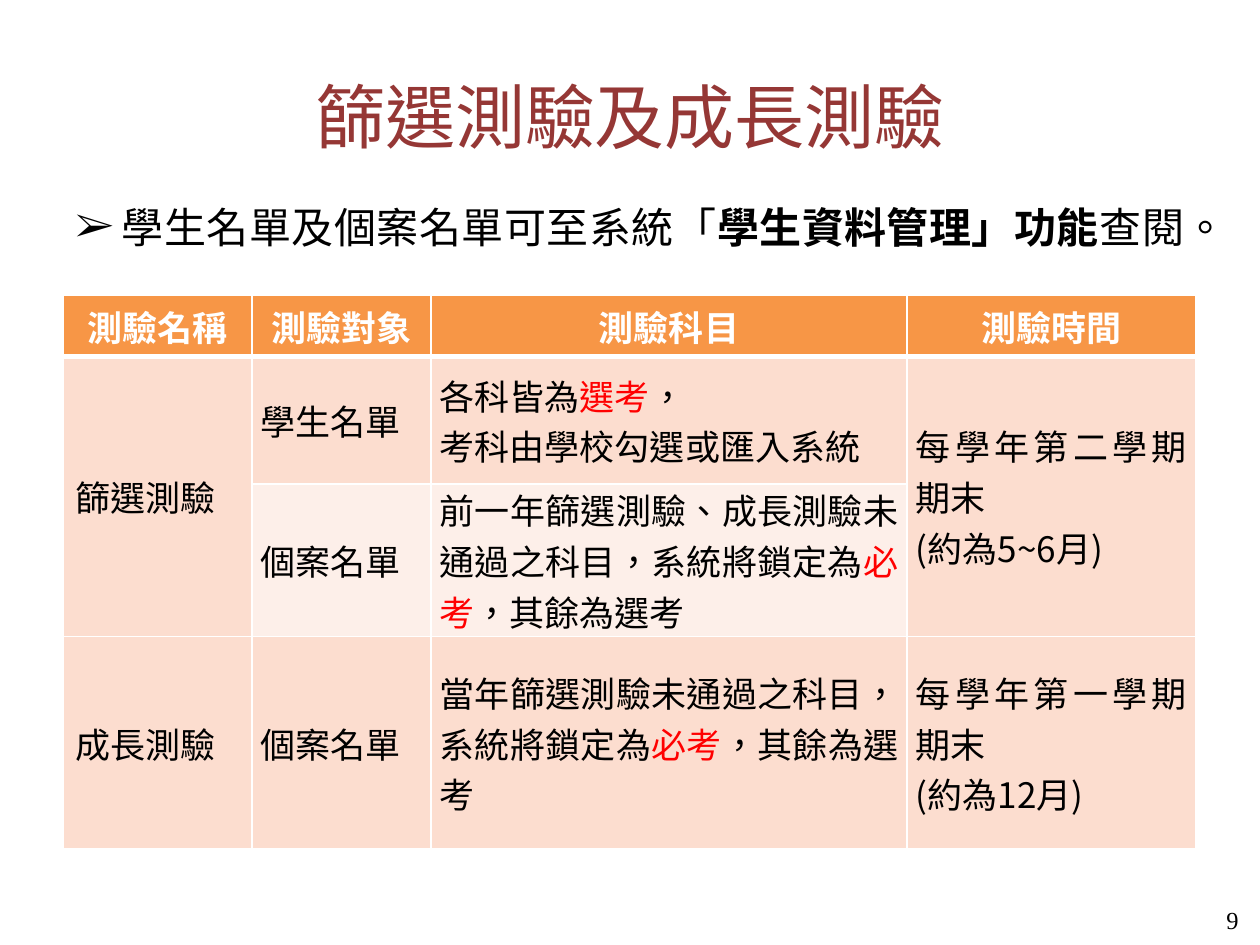
from dataclasses import dataclass

from lxml.etree import SubElement
from pptx import Presentation
from pptx.dml.color import RGBColor
from pptx.enum.text import MSO_ANCHOR, PP_ALIGN
from pptx.oxml.ns import qn
from pptx.util import Inches, Pt

TITLE_RED = RGBColor(0x95, 0x37, 0x35)
BLACK = RGBColor(0, 0, 0)
WHITE = RGBColor(0xFF, 0xFF, 0xFF)
RED = RGBColor(0xFF, 0, 0)
ORANGE = RGBColor(0xF7, 0x96, 0x46)
PEACH = RGBColor(0xFC, 0xDD, 0xCF)
PALE_PEACH = RGBColor(0xFD, 0xEF, 0xE9)
SERIF = "Times New Roman"
SANS = "Noto Sans CJK SC"


@dataclass(frozen=True)
class Span:
    text: str
    color: RGBColor = BLACK
    bold: bool = False


@dataclass(frozen=True)
class BodyCell:
    row: int
    column: int
    lines: tuple[tuple[Span, ...], ...]
    row_span: int = 1


def lines(*texts: str) -> tuple[tuple[Span, ...], ...]:
    return tuple((Span(text),) for text in texts)


def required_subjects(introduction: str) -> tuple[tuple[Span, ...], ...]:
    return ((Span(introduction), Span("必考", RED), Span("，其餘為選考")),)


HEADERS = ("測驗名稱", "測驗對象", "測驗科目", "測驗時間")
COLUMN_WIDTHS = (1.5, 1.42, 3.78, 2.29)
ROW_HEIGHTS = (0.49, 1.01, 1.21, 1.69)
ROW_FILLS = (ORANGE, PEACH, PALE_PEACH, PEACH)
BODY_CELLS = (
    BodyCell(1, 0, lines("篩選測驗"), 2),
    BodyCell(1, 1, lines("學生名單")),
    BodyCell(1, 2, (
        (Span("各科皆為"), Span("選考", RED), Span("，")),
        (Span("考科由學校勾選或匯入系統"),),
    )),
    BodyCell(1, 3, lines("每學年第二學期期末", "(約為5~6月)"), 2),
    BodyCell(2, 1, lines("個案名單")),
    BodyCell(2, 2, required_subjects(
        "前一年篩選測驗、成長測驗未通過之科目，系統將鎖定為")),
    BodyCell(3, 0, lines("成長測驗")),
    BodyCell(3, 1, lines("個案名單")),
    BodyCell(3, 2, required_subjects("當年篩選測驗未通過之科目，系統將鎖定為")),
    BodyCell(3, 3, lines("每學年第一學期期末", "(約為12月)")),
)


def write_paragraph(paragraph, spans: tuple[Span, ...], size: float,
                    font_name: str, alignment: PP_ALIGN) -> None:
    paragraph.alignment = alignment
    for span in spans:
        run = paragraph.add_run()
        run.text = span.text
        run.font.size = Pt(size)
        run.font.name = font_name
        run.font.bold = span.bold
        run.font.color.rgb = span.color
        properties = run._r.get_or_add_rPr()
        properties.set("lang", "zh-TW")
        SubElement(properties, qn("a:ea"), typeface=SANS)


def add_text(slide, left: float, top: float, width: float, height: float,
             spans: tuple[Span, ...], size: float, alignment: PP_ALIGN,
             anchor: MSO_ANCHOR = MSO_ANCHOR.MIDDLE):
    shape = slide.shapes.add_textbox(
        Inches(left), Inches(top), Inches(width), Inches(height))
    frame = shape.text_frame
    frame.word_wrap = True
    frame.vertical_anchor = anchor
    write_paragraph(frame.paragraphs[0], spans, size, SERIF, alignment)
    return frame.paragraphs[0]


def add_bullet(paragraph, character: str, indent: float) -> None:
    properties = paragraph._p.get_or_add_pPr()
    properties.set("marL", str(Inches(indent)))
    properties.set("indent", str(-Inches(indent)))
    SubElement(properties, qn("a:buFont"), typeface=SERIF)
    SubElement(properties, qn("a:buChar"), char=character)


def set_borders(cell, bottom_width: float) -> None:
    properties = cell._tc.get_or_add_tcPr()
    widths = {"a:lnL": 1, "a:lnR": 1, "a:lnT": 1, "a:lnB": bottom_width}
    for position, (tag, width) in enumerate(widths.items()):
        border = SubElement(properties, qn(tag), w=str(Pt(width)))
        fill = SubElement(border, qn("a:solidFill"))
        SubElement(fill, qn("a:srgbClr"), val=str(WHITE))
        properties.insert(position, border)


def add_schedule(slide) -> None:
    table = slide.shapes.add_table(
        len(ROW_HEIGHTS), len(COLUMN_WIDTHS), Inches(0.5), Inches(2.34),
        Inches(sum(COLUMN_WIDTHS)), Inches(sum(ROW_HEIGHTS))).table
    for column, width in zip(table.columns, COLUMN_WIDTHS):
        column.width = Inches(width)
    for index, (row, height, color) in enumerate(
            zip(table.rows, ROW_HEIGHTS, ROW_FILLS)):
        row.height = Inches(height)
        for cell in row.cells:
            cell.fill.solid()
            cell.fill.fore_color.rgb = color
            set_borders(cell, 3 if index == 0 else 1)
    for column, header in enumerate(HEADERS):
        write_paragraph(table.cell(0, column).text_frame.paragraphs[0],
                        (Span(header, WHITE, bold=True),), 20, SANS, PP_ALIGN.CENTER)
    for item in BODY_CELLS:
        cell = table.cell(item.row, item.column)
        if item.row_span > 1:
            cell.merge(table.cell(item.row + item.row_span - 1, item.column))
        cell.vertical_anchor = MSO_ANCHOR.MIDDLE
        if item.column > 0:
            cell.margin_left = cell.margin_right = Inches(0.07)
            cell.margin_top = cell.margin_bottom = Inches(0)
        frame = cell.text_frame
        for index, spans in enumerate(item.lines):
            paragraph = frame.add_paragraph() if index else frame.paragraphs[0]
            write_paragraph(paragraph, spans, 20, SANS, PP_ALIGN.JUSTIFY)


def main() -> None:
    presentation = Presentation()
    presentation.slide_width = Inches(10)
    presentation.slide_height = Inches(7.5)
    slide = presentation.slides.add_slide(presentation.slide_layouts[6])
    add_text(slide, 0.5, 0.29, 9, 1.25,
             (Span("篩選測驗及成長測驗", TITLE_RED),), 40, PP_ALIGN.CENTER)
    add_schedule(slide)
    notice = add_text(slide, 0.5, 1.55, 9, 0.79, (
        Span("學生名單及個案名單可至系統「"),
        Span("學生資料管理」功能", bold=True),
        Span("查閱。"),
    ), 24, PP_ALIGN.JUSTIFY, MSO_ANCHOR.TOP)
    add_bullet(notice, "➢", 0.37)
    add_text(slide, 7.6, 7.1, 2.33, 0.4, (Span("9"),), 14, PP_ALIGN.RIGHT)
    presentation.save("out.pptx")


if __name__ == "__main__":
    main()
